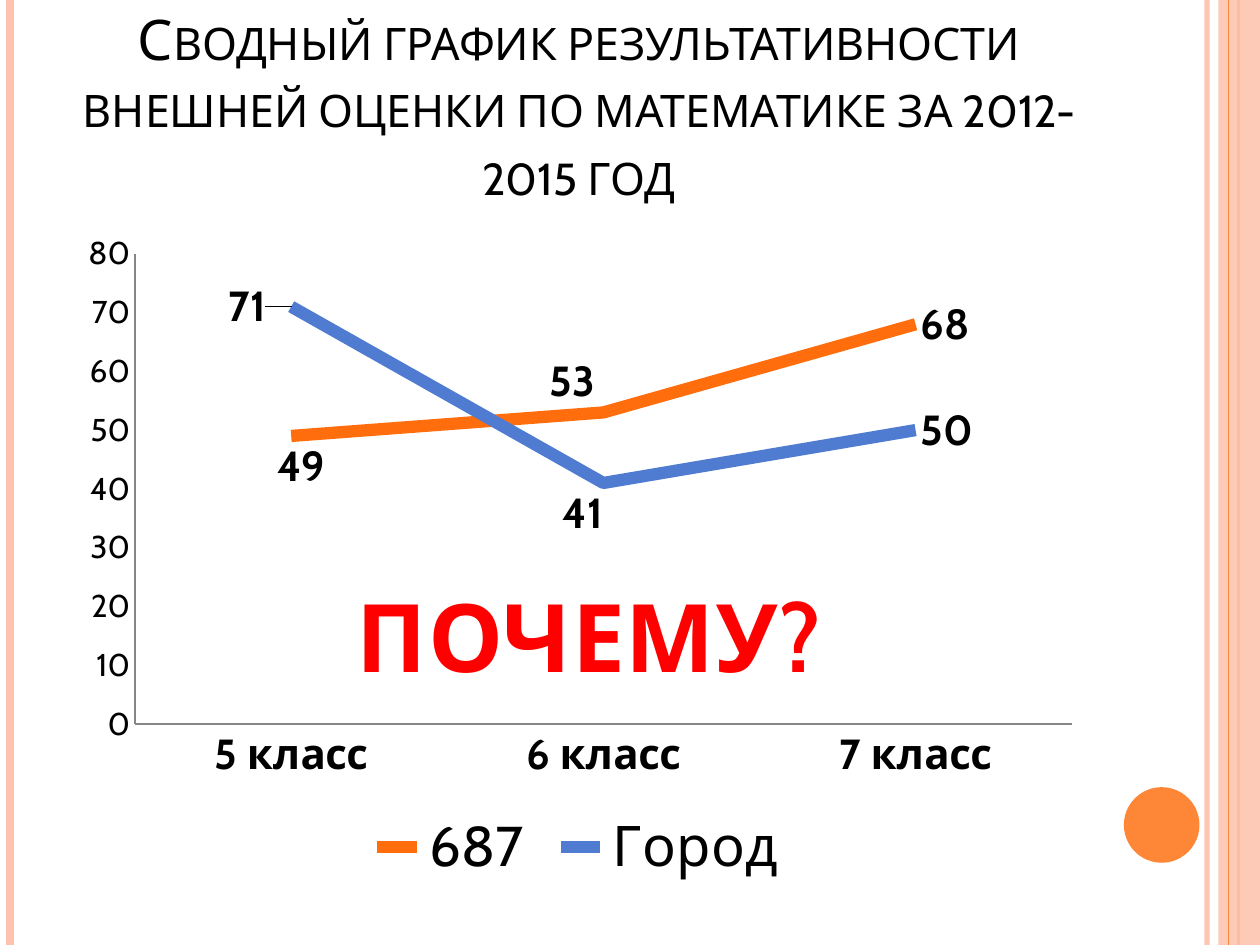
from lxml.etree import SubElement
from pptx import Presentation
from pptx.chart.data import CategoryChartData
from pptx.dml.color import RGBColor
from pptx.enum.chart import XL_CHART_TYPE as ChartType, XL_LABEL_POSITION as Position
from pptx.enum.chart import XL_LEGEND_POSITION as LegendPosition, XL_TICK_MARK as TickMark
from pptx.enum.shapes import MSO_CONNECTOR as Connector, MSO_SHAPE as Shape
from pptx.enum.text import MSO_ANCHOR as Anchor, PP_ALIGN as Align
from pptx.oxml import parse_xml
from pptx.oxml.ns import nsdecls, qn
from pptx.util import Inches, Pt

PEACH = RGBColor(0xFE, 0xC3, 0xAE)
ORANGE = RGBColor(0xFE, 0x86, 0x37)
SCHOOL = RGBColor(0xFF, 0x6D, 0x0D)
CITY = RGBColor(0x4F, 0x7C, 0xD0)
GREY = RGBColor(0x86, 0x86, 0x86)
BLACK = RGBColor(0, 0, 0)
RED = RGBColor(0xFF, 0, 0)
FONT = "Cabin"

deck = Presentation()
deck.slide_width, deck.slide_height = Inches(10), Inches(7.5)
page = deck.slides.add_slide(deck.slide_layouts[6])


def share(*parts):
    sides = (deck.slide_width, deck.slide_height) * 2
    return [round(part * side) for part, side in zip(parts, sides)]


def write_text(text, area, size, color, bold=False, anchor=Anchor.TOP, **run_settings):
    box = page.shapes.add_textbox(*share(*area))
    box.text_frame.word_wrap = True
    box.text_frame.vertical_anchor = anchor
    para = box.text_frame.paragraphs[0]
    para.alignment = Align.CENTER
    span = para.add_run()
    span.text = text
    span.font.name, span.font.size, span.font.bold = FONT, Pt(size), bold
    span.font.color.rgb = color
    for name, value in run_settings.items():
        span.font._element.set(name, value)


for x, color, width, opacity in [
    (0.958, PEACH, 3, 93),
    (0.008, PEACH, 4.5, 100),
    (0.983, ORANGE, 1.5, 100),
    (0.975, ORANGE, 0.75, 100),
]:
    if x == 0.975:
        band = page.shapes.add_shape(Shape.RECTANGLE, *share(0.967, 0, 0.033, 1))
        band.shadow.inherit = False
        band.fill.solid()
        band.fill.fore_color.rgb = PEACH
        band.line.fill.background()
        tint = band._element.spPr.find(".//" + qn("a:srgbClr"))
        SubElement(tint, qn("a:alpha"), val="87000")
    rule = page.shapes.add_connector(Connector.STRAIGHT, *share(x, 0, x, 1))
    rule.line.color.rgb, rule.line.width = color, Pt(width)
    SubElement(rule._element.spPr, qn("a:effectLst"))
    if opacity < 100:
        tint = rule._element.spPr.find(".//" + qn("a:srgbClr"))
        SubElement(tint, qn("a:alpha"), val=str(opacity * 1000))

circle = page.shapes.add_shape(Shape.OVAL, *share(0.892, 0.833, 0.06, 0.08))
circle.shadow.inherit = False
circle.fill.solid()
circle.fill.fore_color.rgb = ORANGE
circle.line.fill.background()

write_text(
    "Сводный график результативности внешней оценки по математике за 2012-2015 год",
    (0.051, 0.058, 0.817, 0.167), 32, BLACK, anchor=Anchor.BOTTOM, cap="small",
)

scores = CategoryChartData()
scores.categories = ["5 класс", "6 класс", "7 класс"]
scores.add_series("687", [49, 53, 68])
scores.add_series("Город", [71, 41, 50])
chart = page.shapes.add_chart(
    ChartType.LINE, *share(0.05, 0.233, 0.817, 0.711), scores
).chart
chart.has_title = False
chart.font.name, chart.font.size = FONT, Pt(18)
chart.font.color.rgb = BLACK
chart.has_legend = True
chart.legend.position = LegendPosition.BOTTOM
chart.legend.include_in_layout = False
chart.legend.font.size = Pt(32)

for axis in (chart.category_axis, chart.value_axis):
    axis.has_major_gridlines = False
    axis.major_tick_mark = axis.minor_tick_mark = TickMark.NONE
    axis.format.line.color.rgb, axis.format.line.width = GREY, Pt(0.75)
chart.category_axis.tick_labels.font.size = Pt(24)
chart.category_axis.tick_labels.font.bold = True
chart.value_axis.minimum_scale, chart.value_axis.maximum_scale = 0, 80
chart.value_axis.major_unit = 10

plot = chart.plots[0]
plot.vary_by_categories = False
placements = [
    (SCHOOL, [(Position.BELOW, 0.01), (Position.ABOVE, -0.03)]),
    (CITY, [(Position.LEFT, -0.02), (Position.BELOW, -0.02)]),
]
for series, (color, points) in zip(plot.series, placements):
    series.smooth = False
    series.format.line.color.rgb, series.format.line.width = color, Pt(7)
    labels = series.data_labels
    labels.show_value, labels.position = True, Position.RIGHT
    labels.font.size, labels.font.bold = Pt(24), True
    for index, (position, shift) in enumerate(points):
        label = series.points[index].data_label
        label.font.size, label.font.bold = Pt(24), True
        label.position = position
        mark = series._element.findall(".//" + qn("c:dLbl"))[index]
        mark.insert(1, parse_xml(
            f'<c:layout {nsdecls("c")}><c:manualLayout>'
            f'<c:x val="{shift}"/><c:y val="0"/></c:manualLayout></c:layout>'
        ))

plot_area = chart.element.find(".//" + qn("c:plotArea"))
for layout in plot_area.findall(qn("c:layout")):
    plot_area.remove(layout)
plot_area.insert(0, parse_xml(
    f'<c:layout {nsdecls("c")}><c:manualLayout><c:layoutTarget val="inner"/>'
    '<c:xMode val="edge"/><c:yMode val="edge"/><c:x val="0.07"/><c:y val="0.05"/>'
    '<c:w val="0.91"/><c:h val="0.7"/></c:manualLayout></c:layout>'
))

write_text("ПОЧЕМУ?", (0.264, 0.605, 0.407, 0.135), 54, RED, bold=True, spc="50")

deck.save("out.pptx")
